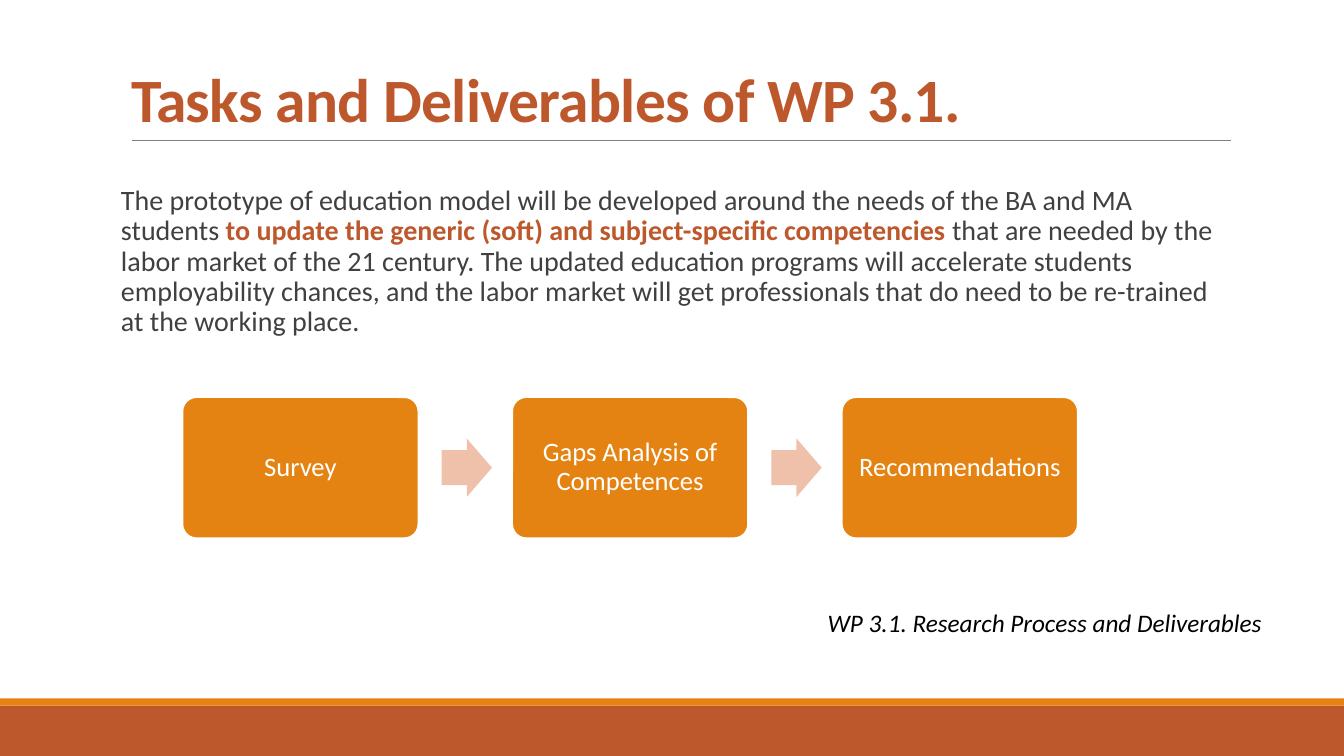
import dataclasses

import pptx
import pptx.dml.color
import pptx.enum.shapes
import pptx.enum.text
import pptx.oxml.ns
import pptx.util
from lxml import etree

SHAPES = pptx.enum.shapes.MSO_SHAPE
ALIGN = pptx.enum.text.PP_ALIGN
ANCHOR = pptx.enum.text.MSO_ANCHOR
AUTOSIZE = pptx.enum.text.MSO_AUTO_SIZE
qn = pptx.oxml.ns.qn
inches = pptx.util.Inches


@dataclasses.dataclass(frozen=True)
class Theme:
    font: str = "Calibri"
    rust: str = "BD582C"
    orange: str = "E48312"
    peach: str = "EFC1AB"
    rule: str = "808080"
    ink: str = "404040"
    black: str = "000000"
    white: str = "FFFFFF"
    title: int = 44
    body: int = 20
    step: int = 19
    caption: int = 18


THEME = Theme()
WIDTH, HEIGHT = 13.33, 7.5
MARGIN = 1.2
CONTENT_WIDTH = 11
STEP_LEFT, STEP_TOP = 1.81, 3.94
STEP_WIDTH, STEP_HEIGHT = 2.34, 1.4
STEP_PITCH = 3.27
ARROW_OFFSET, ARROW_WIDTH, ARROW_HEIGHT = 2.57, 0.5, 0.58

STEPS = ("Survey", "Gaps Analysis of Competences", "Recommendations")
SUMMARY = (
    ("The prototype of education model will be developed around the needs of "
     "the BA and MA students ", THEME.ink, False),
    ("to update the generic (soft) and subject-specific competencies ",
     THEME.rust, True),
    ("that are needed by the labor market of the 21 century. The updated "
     "education programs will accelerate students employability chances, and "
     "the labor market will get professionals that do need to be re-trained "
     "at the working place.", THEME.ink, False),
)


def rgb(value):
    return pptx.dml.color.RGBColor.from_string(value)


def add_run(paragraph, text, size, color, bold=False, italic=False):
    run = paragraph.add_run()
    run.text = text
    run.font.name = THEME.font
    run.font.size = pptx.util.Pt(size)
    run.font.bold = bold
    run.font.italic = italic
    run.font.color.rgb = rgb(color)
    return run


def set_frame(frame, anchor, insets=(0.1, 0.05)):
    frame.word_wrap = True
    frame.auto_size = AUTOSIZE.NONE
    frame.vertical_anchor = anchor
    frame.margin_left = frame.margin_right = inches(insets[0])
    frame.margin_top = frame.margin_bottom = inches(insets[1])
    return frame.paragraphs[0]


def place(shape, left, top, width, height):
    shape.left, shape.top = inches(left), inches(top)
    shape.width, shape.height = inches(width), inches(height)


def add_block(slide, kind, box, fill, adjustments=(), outline=None):
    block = slide.shapes.add_shape(kind, *map(inches, box))
    block.shadow.inherit = False
    for index, value in enumerate(adjustments):
        block.adjustments[index] = value
    block.fill.solid()
    block.fill.fore_color.rgb = rgb(fill)
    if outline:
        block.line.color.rgb = rgb(outline)
        block.line.width = pptx.util.Pt(1.25)
    else:
        block.line.fill.background()
    return block


def add_rule(slide, left, right, top):
    rule = slide.shapes.add_connector(
        pptx.enum.shapes.MSO_CONNECTOR.STRAIGHT,
        inches(left), inches(top), inches(right), inches(top))
    rule.line.color.rgb = rgb(THEME.rule)
    rule.line.width = pptx.util.Pt(0.5)
    etree.SubElement(rule._element.spPr, qn("a:effectLst"))


def fill_title(slide, text):
    title = slide.shapes.title
    place(title, MARGIN, 0.22, CONTENT_WIDTH, 1.17)
    heading = set_frame(title.text_frame, ANCHOR.BOTTOM)
    heading.alignment = ALIGN.LEFT
    heading.line_spacing = 0.85
    run = add_run(heading, text, THEME.title, THEME.rust, bold=True)
    run.font._element.set("spc", "-50")


def fill_summary(slide, parts):
    body = slide.placeholders[1]
    place(body, MARGIN, 1.8, CONTENT_WIDTH, 1.76)
    summary = set_frame(body.text_frame, ANCHOR.TOP, (0, 0.05))
    properties = summary._p.get_or_add_pPr()
    properties.set("marL", "0")
    properties.set("indent", "0")
    etree.SubElement(properties, qn("a:buNone"))
    summary.line_spacing = 0.9
    summary.space_before = pptx.util.Pt(0)
    summary.space_after = pptx.util.Pt(2)
    for text, color, bold in parts:
        add_run(summary, text, THEME.body, color, bold)


def add_step(slide, left, text):
    step = add_block(slide, SHAPES.ROUNDED_RECTANGLE,
                     (left, STEP_TOP, STEP_WIDTH, STEP_HEIGHT),
                     THEME.orange, (0.1,), THEME.white)
    label = set_frame(step.text_frame, ANCHOR.MIDDLE, (0.08, 0.08))
    label.alignment = ALIGN.CENTER
    label.line_spacing = 0.9
    add_run(label, text, THEME.step, THEME.white)


def add_process(slide, steps):
    arrow_top = STEP_TOP + (STEP_HEIGHT - ARROW_HEIGHT) / 2
    for index, text in enumerate(steps):
        left = STEP_LEFT + index * STEP_PITCH
        add_step(slide, left, text)
        if index < len(steps) - 1:
            add_block(slide, SHAPES.RIGHT_ARROW,
                      (left + ARROW_OFFSET, arrow_top, ARROW_WIDTH, ARROW_HEIGHT),
                      THEME.peach, (0.6, 0.5))


def add_caption(slide, text):
    box = slide.shapes.add_textbox(*map(inches, (8.11, 5.98, 4.73, 0.4)))
    caption = set_frame(box.text_frame, ANCHOR.TOP)
    add_run(caption, text, THEME.caption, THEME.black, italic=True)


def main():
    deck = pptx.Presentation()
    deck.slide_width, deck.slide_height = inches(WIDTH), inches(HEIGHT)
    slide = deck.slides.add_slide(deck.slide_layouts[1])
    add_block(slide, SHAPES.RECTANGLE, (0, 7, WIDTH, 0.5), THEME.rust)
    add_block(slide, SHAPES.RECTANGLE, (0, 6.93, WIDTH, 0.07), THEME.orange)
    add_rule(slide, 1.31, 12.21, 1.39)
    fill_title(slide, "Tasks and Deliverables of WP 3.1.")
    fill_summary(slide, SUMMARY)
    add_process(slide, STEPS)
    add_caption(slide, "WP 3.1. Research Process and Deliverables")
    deck.save("out.pptx")


if __name__ == "__main__":
    main()
